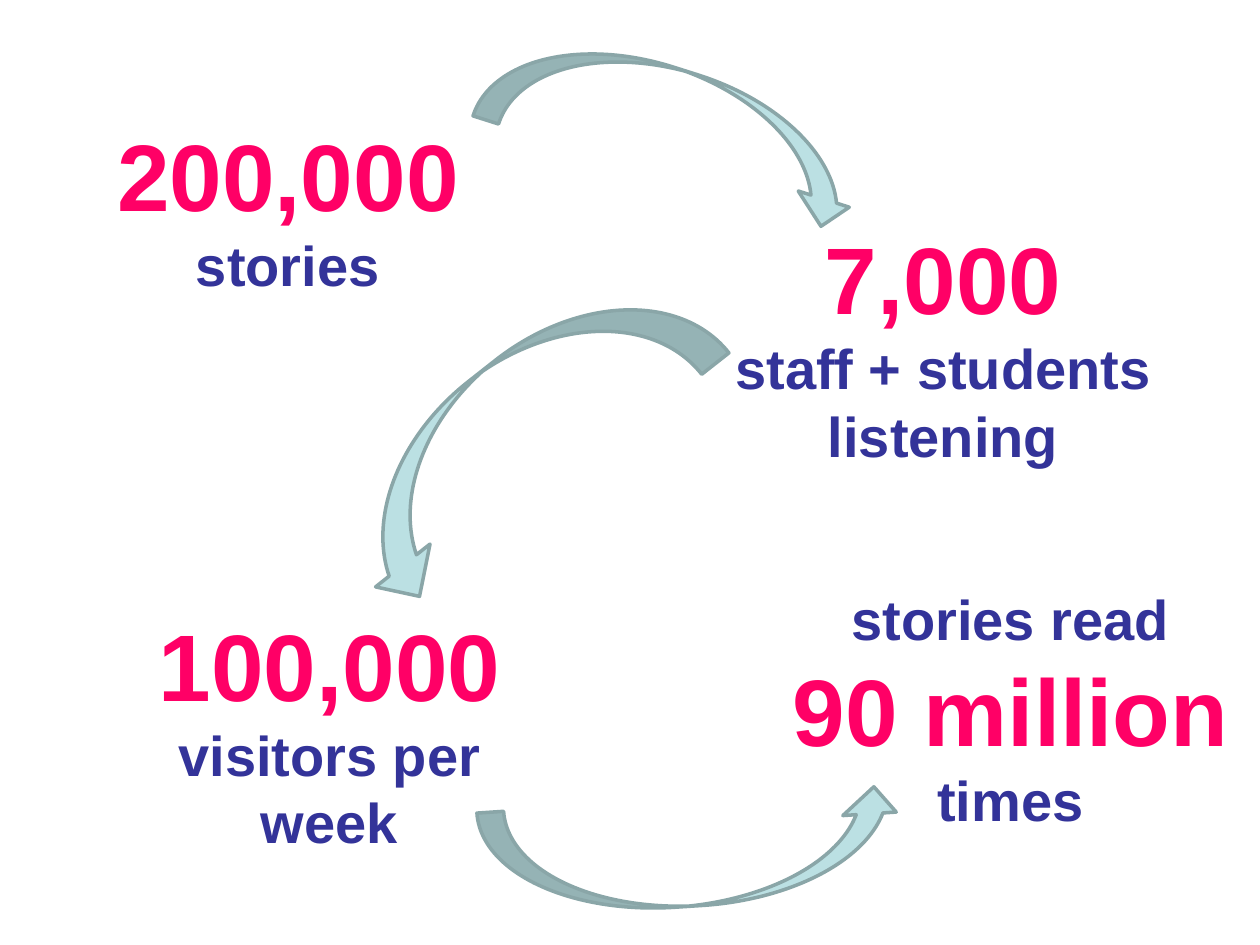
from pptx import Presentation
from pptx.dml.color import RGBColor
from pptx.enum.shapes import MSO_SHAPE
from pptx.enum.text import MSO_AUTO_SIZE, PP_ALIGN
from pptx.util import Inches, Pt

CURVED_ARROW = MSO_SHAPE.CURVED_LEFT_ARROW
CENTER = PP_ALIGN.CENTER
GROW = MSO_AUTO_SIZE.SHAPE_TO_FIT_TEXT
FIGURE = (54, "FF0066")
CAPTION = (32, "333399")

STATISTICS = [
    ((0.59, 0.88, 3.39, 1.55), [("200,000", FIGURE), ("stories", CAPTION)]),
    ((0.92, 4.77, 3.39, 2.09),
     [("100,000", FIGURE), ("visitors per week", CAPTION)]),
    ((6.16, 4.59, 3.72, 2.09),
     [("stories read", CAPTION), ("90 million", FIGURE), ("times", CAPTION)]),
    ((5.24, 1.7, 4.49, 2.09),
     [("7,000", FIGURE), ("staff + students listening", CAPTION)]),
]

ARROWS = [
    ((4.94, -0.57, 0.85, 3.11), 287.6, None),
    ((5.07, 5.08, 0.85, 3.37), 86.2, "flipV"),
    ((3.56, 1.72, 1.1, 3.4), 51.8, "flipH"),
]


def color(value):
    return RGBColor.from_string(value)


def add_statistic(slide, box, lines):
    frame = slide.shapes.add_textbox(*map(Inches, box)).text_frame
    frame.word_wrap = True
    frame.auto_size = GROW
    frame.text = "\n".join(text for text, style in lines)
    for paragraph, (text, (size, ink)) in zip(frame.paragraphs, lines):
        paragraph.alignment = CENTER
        font = paragraph.font
        font.name = "Arial"
        font.size = Pt(size)
        font.bold = True
        font.color.rgb = color(ink)


def add_curved_arrow(slide, box, rotation, flip):
    arrow = slide.shapes.add_shape(CURVED_ARROW, *map(Inches, box))
    arrow.rotation = rotation
    if flip:
        arrow._element.spPr.xfrm.set(flip, "1")
    arrow.shadow.inherit = False
    arrow.fill.solid()
    arrow.fill.fore_color.rgb = color("BBE0E3")
    arrow.line.color.rgb = color("8AA6A8")
    arrow.line.width = Pt(2)


def main():
    presentation = Presentation()
    presentation.slide_width = Inches(10)
    presentation.slide_height = Inches(7.5)
    slide = presentation.slides.add_slide(presentation.slide_layouts[6])
    for box, lines in STATISTICS:
        add_statistic(slide, box, lines)
    for box, rotation, flip in ARROWS:
        add_curved_arrow(slide, box, rotation, flip)
    presentation.save("out.pptx")


if __name__ == "__main__":
    main()
